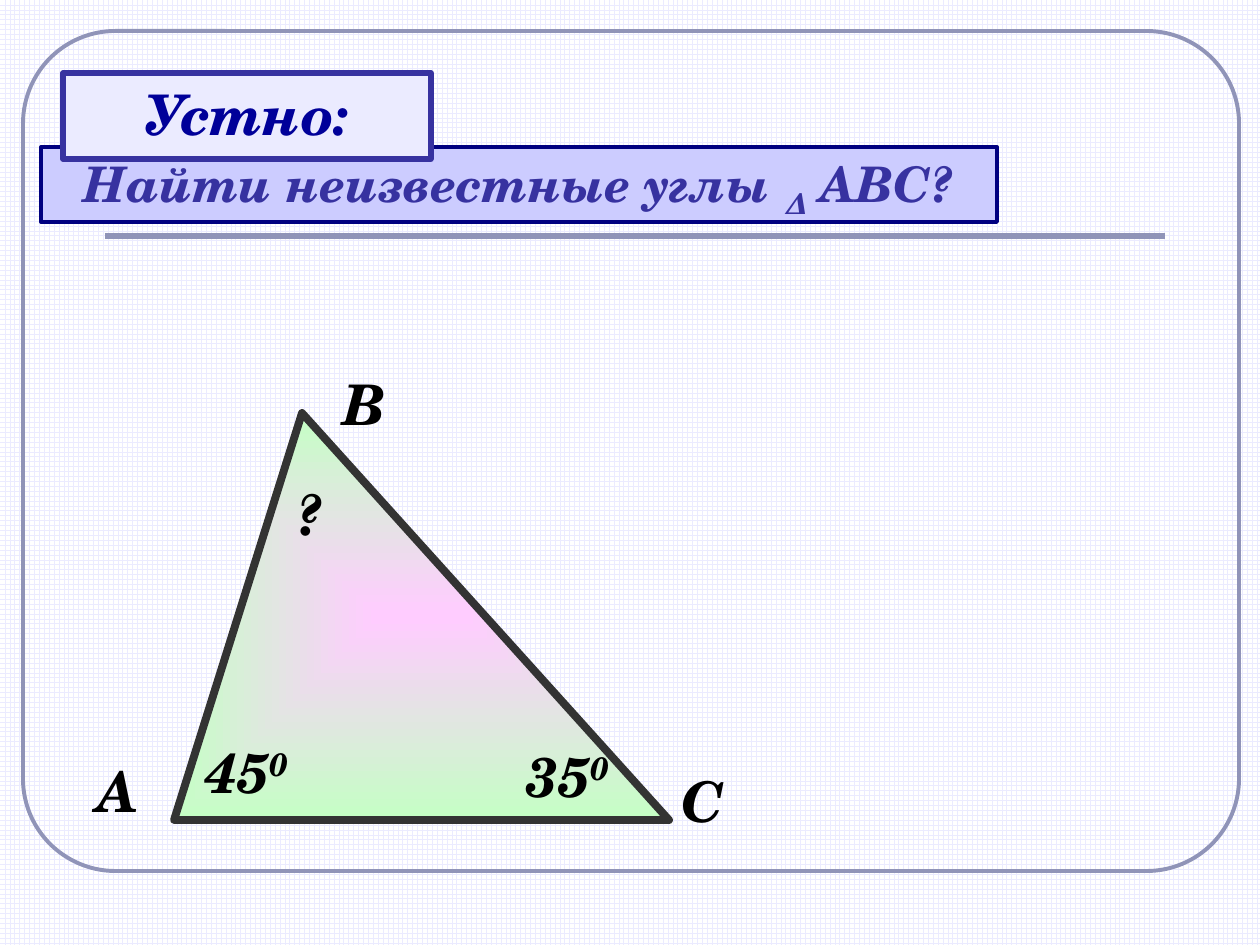
from lxml import etree
from pptx import Presentation
from pptx import util as u
from pptx.dml.color import RGBColor
from pptx.enum import dml, shapes, text
from pptx.oxml.ns import qn

PX = 914400 / 126
FONT = "TeX Gyre Schola"

BLACK = RGBColor(0x00, 0x00, 0x00)
WHITE = RGBColor(0xFF, 0xFF, 0xFF)
PALE = RGBColor(0xEB, 0xEB, 0xFF)
LILAC = RGBColor(0xCC, 0xCC, 0xFF)
FRAME = RGBColor(0x90, 0x94, 0xB8)
INDIGO = RGBColor(0x37, 0x32, 0xA0)
NAVY = RGBColor(0x00, 0x00, 0x80)
HEADING = RGBColor(0x00, 0x00, 0x99)
EDGE = RGBColor(0x33, 0x33, 0x33)
PINK = RGBColor(0xFF, 0xCC, 0xFF)
GREEN = RGBColor(0xC5, 0xFF, 0xC5)

# Runs are (wording, baseline shift in percent)
LABELS = [
    ([("А", 0)], (84, 750, 66, 79)),
    ([("В", 0)], (331, 363, 66, 79)),
    ([("С", 0)], (669, 760, 66, 79)),
    ([("35", 0), ("0", 30)], (514, 735, 139, 79)),
    ([("45", 0), ("0", 30)], (193, 731, 139, 79)),
    ([("?", 0)], (284, 473, 139, 79)),
]
TASK = [("Найти неизвестные углы ", 0), ("Δ", -25), (" АВС?", 0)]
BANNERS = [
    (TASK, (41, 147, 956, 75), LILAC, NAVY, 2.25, INDIGO, 28),
    ([("Устно:", 0)], (63, 73, 368, 86), PALE, INDIGO, 3, HEADING, 32),
]
TRIANGLE = [(174, 820), (669, 820), (302, 413)]
RULE = (105, 236, 1165, 236)


def px(*lengths):
    return [u.Emu(round(n * PX)) for n in lengths]


def write(shape, runs, *, size=32, color=BLACK, align=text.PP_ALIGN.LEFT):
    frame = shape.text_frame
    frame.word_wrap = True
    frame.vertical_anchor = text.MSO_ANCHOR.TOP
    paragraph = frame.paragraphs[0]
    paragraph.alignment = align
    for wording, shift in runs:
        run = paragraph.add_run()
        run.text = wording
        font = run.font
        font.name, font.size = FONT, u.Pt(size)
        font.bold = font.italic = True
        font.color.rgb = color
        if shift:
            run._r.get_or_add_rPr().set("baseline", str(shift * 1000))


def outline(shape, color, width):
    shape.shadow.inherit = False
    shape.line.color.rgb = color
    shape.line.width = u.Pt(width)


def add_frame(slide):
    frame = slide.shapes.add_shape(
        shapes.MSO_SHAPE.ROUNDED_RECTANGLE, *px(23, 31, 1216, 840))
    frame.adjustments[0] = 0.11
    frame.fill.background()
    outline(frame, FRAME, 2.25)
    rule = slide.shapes.add_connector(shapes.MSO_CONNECTOR.STRAIGHT, *px(*RULE))
    rule.line.color.rgb = FRAME
    rule.line.width = u.Pt(3)
    etree.SubElement(rule._element.spPr, qn("a:effectLst"))


def add_triangle(slide):
    """Triangle with rounded corners and a fill that spreads from its centre."""
    start, *others = TRIANGLE
    builder = slide.shapes.build_freeform(*start, scale=PX)
    builder.add_line_segments(others, close=True)
    triangle = builder.convert_to_shape()
    outline(triangle, EDGE, 4.5)
    etree.SubElement(triangle.line._get_or_add_ln(), qn("a:round"))

    fill = triangle.fill
    fill.gradient()
    for stop, color, position in zip(fill.gradient_stops, (PINK, GREEN), (0, 1)):
        stop.color.rgb = color
        stop.position = position
    gradient = triangle._element.spPr.find(qn("a:gradFill"))
    gradient.remove(gradient.find(qn("a:lin")))
    spread = etree.SubElement(gradient, qn("a:path"), path="rect")
    etree.SubElement(spread, qn("a:fillToRect"),
                     {side: "50000" for side in "ltrb"})


def main():
    deck = Presentation()
    deck.slide_width, deck.slide_height = px(1260, 945)
    slide = deck.slides.add_slide(deck.slide_layouts[6])

    paper = slide.background.fill
    paper.patterned()
    paper.pattern = dml.MSO_PATTERN.LARGE_GRID
    paper.fore_color.rgb = PALE
    paper.back_color.rgb = WHITE

    add_frame(slide)
    add_triangle(slide)
    for runs, box in LABELS:
        write(slide.shapes.add_textbox(*px(*box)), runs)
    for runs, box, fill, edge, width, color, size in BANNERS:
        banner = slide.shapes.add_shape(shapes.MSO_SHAPE.RECTANGLE, *px(*box))
        banner.fill.solid()
        banner.fill.fore_color.rgb = fill
        outline(banner, edge, width)
        write(banner, runs, size=size, color=color, align=text.PP_ALIGN.CENTER)

    deck.save("out.pptx")


if __name__ == "__main__":
    main()
